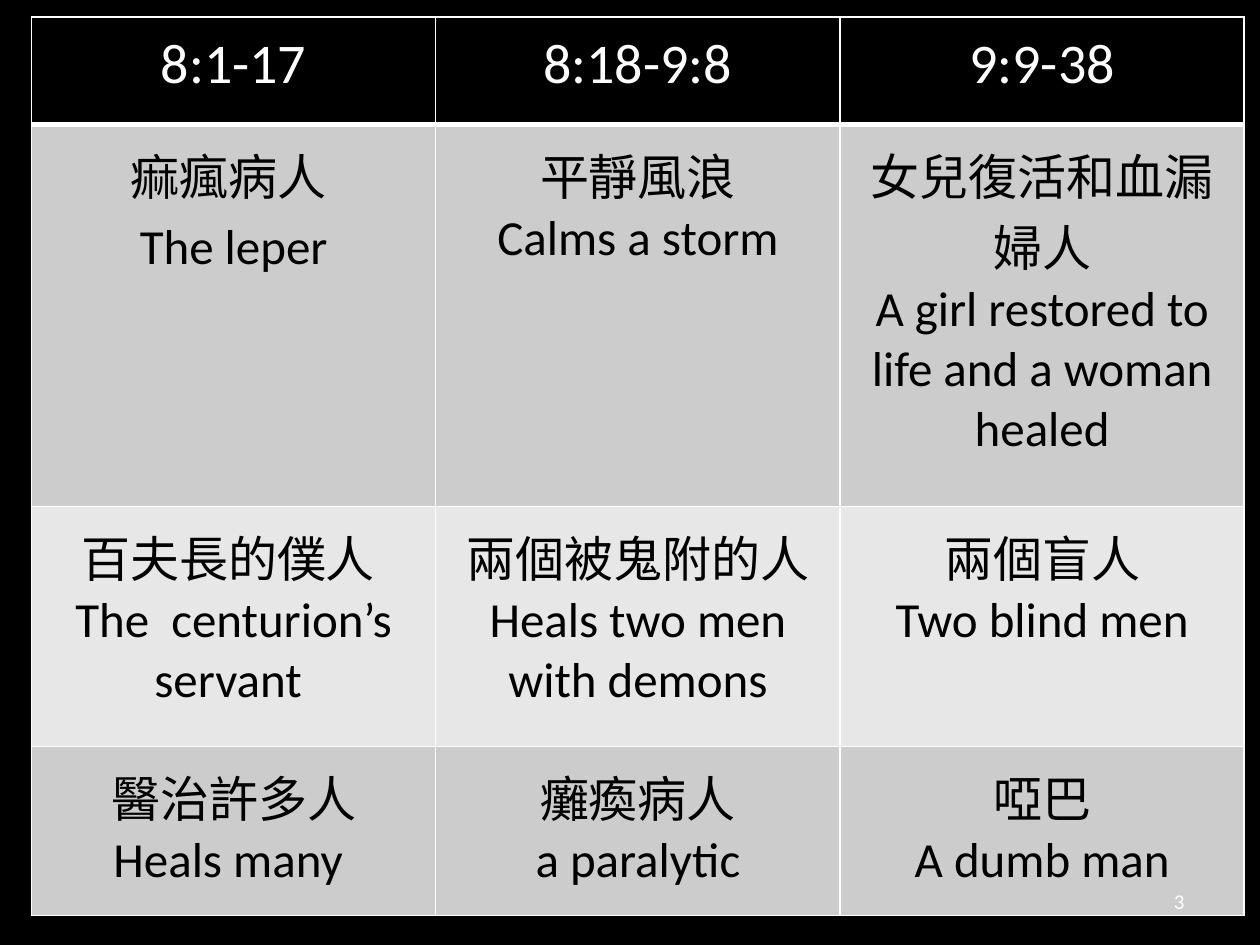
from lxml.etree import SubElement
from pptx import Presentation
from pptx.dml.color import RGBColor
from pptx.enum.text import MSO_ANCHOR as Anchor, PP_ALIGN as Align
from pptx.oxml.ns import qn
from pptx.util import Pt

COLORS = {
    "black": "000000",
    "white": "FFFFFF",
    "dark_band": "CCCCCC",
    "light_band": "E7E7E7",
}
HEADINGS = ["8:1-17", "8:18-9:8", "9:9-38"]
MIRACLES = [
    [
        ("痲瘋病人 ", " The leper "),
        ("平靜風浪", "Calms a storm"),
        ("女兒復活和血漏婦人", "A girl restored to life and a woman healed"),
    ],
    [
        ("百夫長的僕人 ", "The  centurion’s servant "),
        ("兩個被鬼附的人", "Heals two men with demons"),
        ("兩個盲人", "Two blind men"),
    ],
    [
        ("醫治許多人", "Heals many "),
        ("癱瘓病人", "a paralytic"),
        ("啞巴", "A dumb man"),
    ],
]
ROW_HEIGHTS = [61.7, 218.2, 137.2, 96.5]
COLUMN_WIDTH = 231


def write(paragraph, text, size=28, font="Calibri", color="black", align=Align.CENTER, before=0):
    paragraph.alignment = align
    paragraph.space_before = Pt(before)
    run = paragraph.add_run()
    run.text = text
    run.font.size = Pt(size)
    run.font.name = font
    run.font.color.rgb = RGBColor.from_string(COLORS[color])


def style_cell(cell, fill, bottom=1):
    cell.margin_left = cell.margin_right = Pt(11.5)
    cell.margin_top = cell.margin_bottom = Pt(7.9)
    properties = cell._tc.get_or_add_tcPr()
    for side, width in (("L", 1), ("R", 1), ("T", 1), ("B", bottom)):
        line = SubElement(properties, qn(f"a:ln{side}"), w=str(Pt(width)))
        solid = SubElement(line, qn("a:solidFill"))
        SubElement(solid, qn("a:srgbClr"), val=COLORS["white"])
    cell.fill.solid()
    cell.fill.fore_color.rgb = RGBColor.from_string(COLORS[fill])


presentation = Presentation()
presentation.slide_width = Pt(720)
presentation.slide_height = Pt(540)
slide = presentation.slides.add_slide(presentation.slide_layouts[6])
slide.background.fill.solid()
slide.background.fill.fore_color.rgb = RGBColor.from_string(COLORS["black"])

table = slide.shapes.add_table(
    len(ROW_HEIGHTS), len(HEADINGS), Pt(18), Pt(9.6),
    Pt(COLUMN_WIDTH * len(HEADINGS)), Pt(sum(ROW_HEIGHTS)),
).table
table.horz_banding = False
for column in table.columns:
    column.width = Pt(COLUMN_WIDTH)
for row, height in zip(table.rows, ROW_HEIGHTS):
    row.height = Pt(height)

for column_index, heading in enumerate(HEADINGS):
    cell = table.cell(0, column_index)
    style_cell(cell, "black", bottom=3)
    write(cell.text_frame.paragraphs[0], heading, size=32, color="white")

for row_index, miracles in enumerate(MIRACLES, start=1):
    for column_index, (chinese, english) in enumerate(miracles):
        cell = table.cell(row_index, column_index)
        style_cell(cell, "dark_band" if row_index % 2 else "light_band")
        write(cell.text_frame.paragraphs[0], chinese, font="Roboto")
        gap = 5 if (row_index, column_index) == (1, 0) else 0
        write(cell.text_frame.add_paragraph(), english, before=gap)

page_number = slide.shapes.add_textbox(Pt(516), Pt(500.5), Pt(168), Pt(28.8))
page_number.text_frame.word_wrap = True
page_number.text_frame.vertical_anchor = Anchor.MIDDLE
write(page_number.text_frame.paragraphs[0], "3", size=12, color="white", align=Align.RIGHT)

presentation.save("out.pptx")
